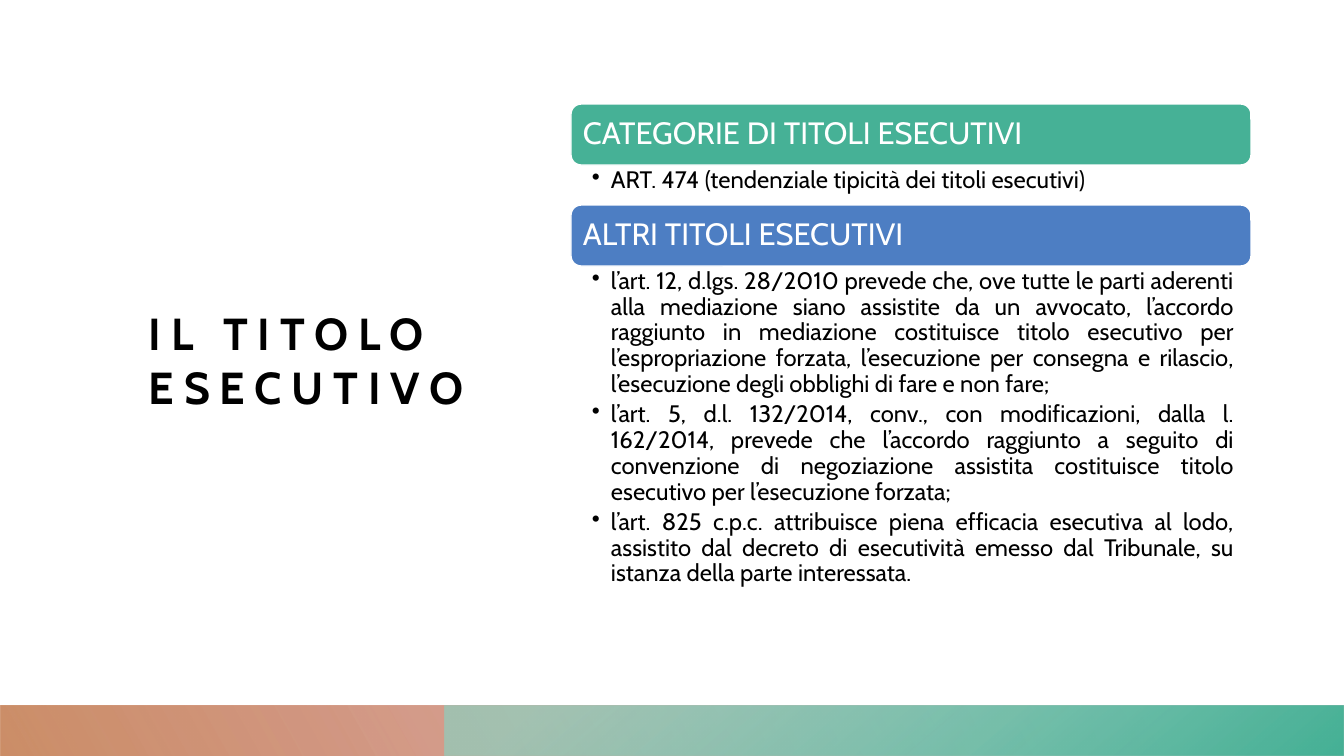
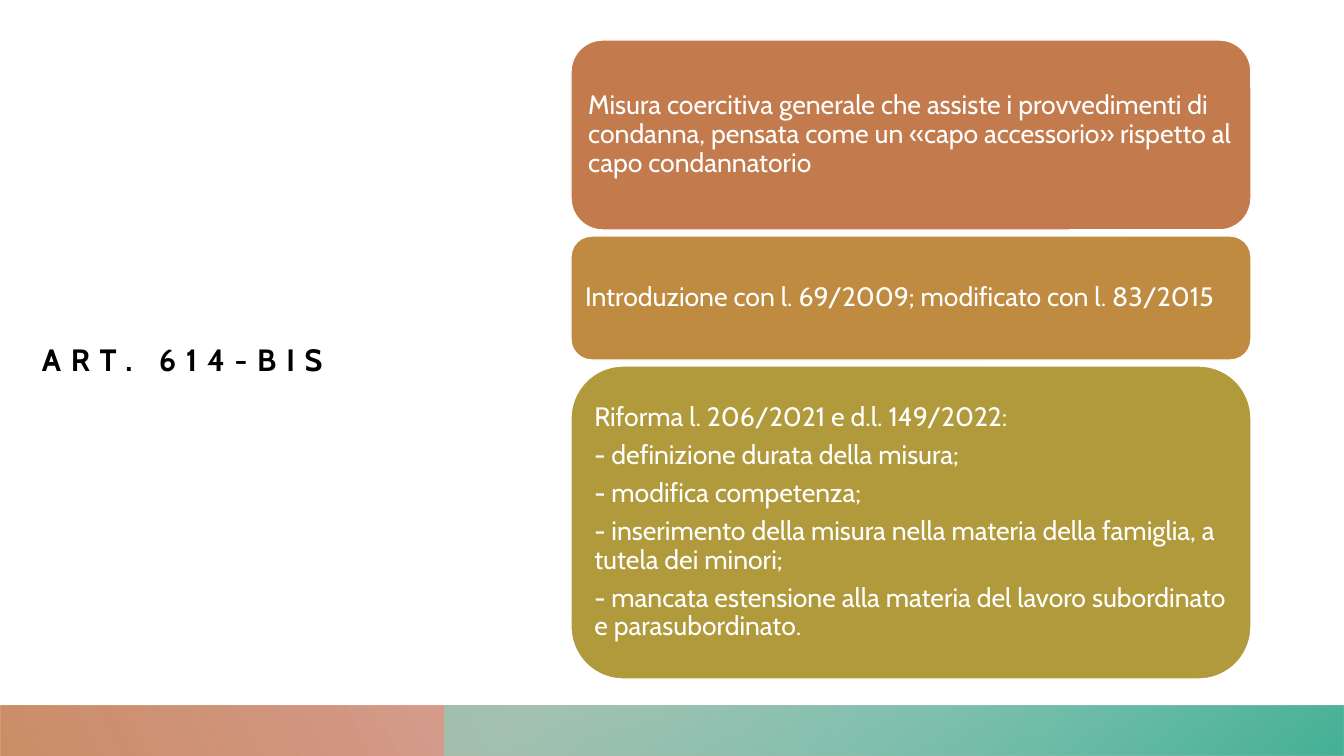
import pptx
import pptx.dml.color
import pptx.enum.shapes
import pptx.enum.text
import pptx.oxml
import pptx.oxml.ns
import pptx.util

SLIDE_WIDTH, SLIDE_HEIGHT = 1344, 756
EMU_PER_PX = 12192000 / SLIDE_WIDTH

FONT = "Cabin"
BLACK, WHITE = "000000", "FFFFFF"
GREEN, BLUE = "46B196", "4D7EC3"
ORANGE, OCHRE, OLIVE = "C37B4D", "BE8B40", "B19A3B"
RED, LIGHT_GREEN = "B13B3E", "8ED2C1"

BAND_TOP, BAND_SPLIT = 706, 445
CONTENT_LEFT, CONTENT_WIDTH = 571, 680

ANCHOR = pptx.enum.text.MSO_ANCHOR
ALIGN = pptx.enum.text.PP_ALIGN
SHAPE = pptx.enum.shapes.MSO_SHAPE
qn = pptx.oxml.ns.qn


def px(length):
    return pptx.util.Emu(round(length * EMU_PER_PX))


def color(hex_string):
    return pptx.dml.color.RGBColor.from_string(hex_string)


def prepare_frame(shape, insets, anchor):
    """Set wrapping, anchor and the left, top, right, bottom insets."""
    frame = shape.text_frame
    frame.word_wrap = True
    frame.vertical_anchor = anchor
    (frame.margin_left, frame.margin_top,
     frame.margin_right, frame.margin_bottom) = map(px, insets)
    return frame


def add_run(paragraph, text, size, hex_string):
    run = paragraph.add_run()
    run.text = text
    run.font.name = FONT
    run.font.size = pptx.util.Pt(size)
    run.font.color.rgb = color(hex_string)
    return run


def fill_frame(frame, texts, size, hex_string, spacing, align=ALIGN.LEFT):
    """Write one paragraph per text; spacing is a share of the text size."""
    for index, text in enumerate(texts):
        paragraph = frame.paragraphs[0] if index == 0 else frame.add_paragraph()
        paragraph.alignment = align
        paragraph.line_spacing = 0.9
        paragraph.space_after = pptx.util.Pt(size * spacing)
        add_run(paragraph, text, size, hex_string)


def set_bullet(paragraph, indent):
    properties = paragraph._p.get_or_add_pPr()
    properties.set("marL", str(px(indent)))
    properties.set("indent", str(-px(indent)))
    bullet = pptx.oxml.parse_xml(
        f'<a:buChar {pptx.oxml.ns.nsdecls("a")} char="•"/>')
    properties.append(bullet)


def add_band(slide, left, stops, angle, rotation=0):
    """Add a mirrored gradient band; stops are (position, colour, opacity)."""
    band = slide.shapes.add_shape(
        SHAPE.RECTANGLE, px(left), px(BAND_TOP),
        px(SLIDE_WIDTH - left), px(SLIDE_HEIGHT - BAND_TOP))
    band.shadow.inherit = False
    band.line.fill.background()
    band.rotation = rotation
    properties = band._element.spPr
    properties.find(qn("a:xfrm")).set("flipH", "1")
    band.fill.gradient()
    band.fill.gradient_angle = angle
    for stop, (position, hex_string, _) in zip(band.fill.gradient_stops, stops):
        stop.position = position
        stop.color.rgb = color(hex_string)
    for element, (_, _, opacity) in zip(properties.iter(qn("a:srgbClr")), stops):
        alpha = pptx.oxml.parse_xml(
            f'<a:alpha {pptx.oxml.ns.nsdecls("a")} val="{opacity * 1000}"/>')
        element.append(alpha)


def add_title(slide, text, left, width, size):
    title = slide.shapes.add_textbox(px(left), px(113), px(width), px(493))
    frame = prepare_frame(title, (0, 0, 0, 0), ANCHOR.MIDDLE)
    run = add_run(frame.paragraphs[0], text, size, BLACK)
    run.font.bold = True
    run._r.get_or_add_rPr().set("spc", "700")


def add_base_slide(presentation, title, left, width, size):
    """Add a slide with the title and footer bands that all slides share."""
    slide = presentation.slides.add_slide(presentation.slide_layouts[6])
    add_title(slide, title, left, width, size)
    add_band(slide, 0, [(0.14, RED, 28), (1, ORANGE, 85)], 150, rotation=180)
    add_band(slide, BAND_SPLIT,
             [(0.09, LIGHT_GREEN, 68), (0.99, GREEN, 100)], 230)
    return slide


def add_card(slide, top, height, fill, texts, size, inset):
    card = slide.shapes.add_shape(
        SHAPE.ROUNDED_RECTANGLE, px(CONTENT_LEFT), px(top),
        px(CONTENT_WIDTH), px(height))
    card.shadow.inherit = False
    card.fill.solid()
    card.fill.fore_color.rgb = color(fill)
    card.line.color.rgb = color(WHITE)
    card.line.width = pptx.util.Pt(1)
    frame = prepare_frame(card, (inset,) * 4, ANCHOR.MIDDLE)
    fill_frame(frame, texts, size, WHITE, 0.35)


def add_bullets(slide, top, height, texts, align):
    box = slide.shapes.add_textbox(
        px(CONTENT_LEFT), px(top), px(CONTENT_WIDTH), px(height))
    frame = prepare_frame(box, (21, 3, 17, 3), ANCHOR.TOP)
    fill_frame(frame, texts, 17, BLACK, 0.2, align)
    for paragraph in frame.paragraphs:
        set_bullet(paragraph, 19)


def add_sections(slide, top, sections):
    """Stack headings, each followed by its bullet list."""
    heading_height = 61
    for heading, fill, list_height, texts, align in sections:
        add_card(slide, top, heading_height, fill, [heading], 22, 9)
        top += heading_height
        add_bullets(slide, top, list_height, texts, align)
        top += list_height


def add_card_stack(slide, top, gap, cards):
    for height, fill, texts in cards:
        add_card(slide, top, height, fill, texts, 19, 8)
        top += height + gap


def build_enforcement_titles(presentation):
    slide = add_base_slide(presentation, "IL TITOLO ESECUTIVO", 149, 367, 32)
    add_sections(slide, 104, [
        ("CATEGORIE DI TITOLI ESECUTIVI", GREEN, 40, [
            "ART. 474 (tendenziale tipicità dei titoli esecutivi)",
        ], ALIGN.LEFT),
        ("ALTRI TITOLI ESECUTIVI", BLUE, 362, [
            "l’art. 12, d.lgs. 28/2010 prevede che, ove tutte le parti aderenti "
            "alla mediazione siano assistite da un avvocato, l’accordo raggiunto "
            "in mediazione costituisce titolo esecutivo per l’espropriazione "
            "forzata, l’esecuzione per consegna e rilascio, l’esecuzione degli "
            "obblighi di fare e non fare;",
            "l’art. 5, d.l. 132/2014, conv., con modificazioni, dalla l. "
            "162/2014, prevede che l’accordo raggiunto a seguito di convenzione "
            "di negoziazione assistita costituisce titolo esecutivo per "
            "l’esecuzione forzata;",
            "l’art. 825 c.p.c. attribuisce piena efficacia esecutiva al lodo, "
            "assistito dal decreto di esecutività emesso dal Tribunale, su "
            "istanza della parte interessata.",
        ], ALIGN.JUSTIFY),
    ])


def build_article_614_bis(presentation):
    slide = add_base_slide(presentation, "ART. 614-BIS", 42, 403, 22)
    add_card_stack(slide, 40, 6, [
        (190, ORANGE, [
            "Misura coercitiva generale che assiste i provvedimenti di condanna, "
            "pensata come un «capo accessorio» rispetto al capo condannatorio",
        ]),
        (124, OCHRE, ["Introduzione con l. 69/2009; modificato con l. 83/2015"]),
        (313, OLIVE, [
            "Riforma l. 206/2021 e d.l. 149/2022:",
            "- definizione durata della misura;",
            "- modifica competenza;",
            "- inserimento della misura nella materia della famiglia, a tutela "
            "dei minori;",
            "- mancata estensione alla materia del lavoro subordinato e "
            "parasubordinato.",
        ]),
    ])


def main():
    presentation = pptx.Presentation()
    presentation.slide_width = px(SLIDE_WIDTH)
    presentation.slide_height = px(SLIDE_HEIGHT)
    build_enforcement_titles(presentation)
    build_article_614_bis(presentation)
    presentation.save("out.pptx")


if __name__ == "__main__":
    main()
